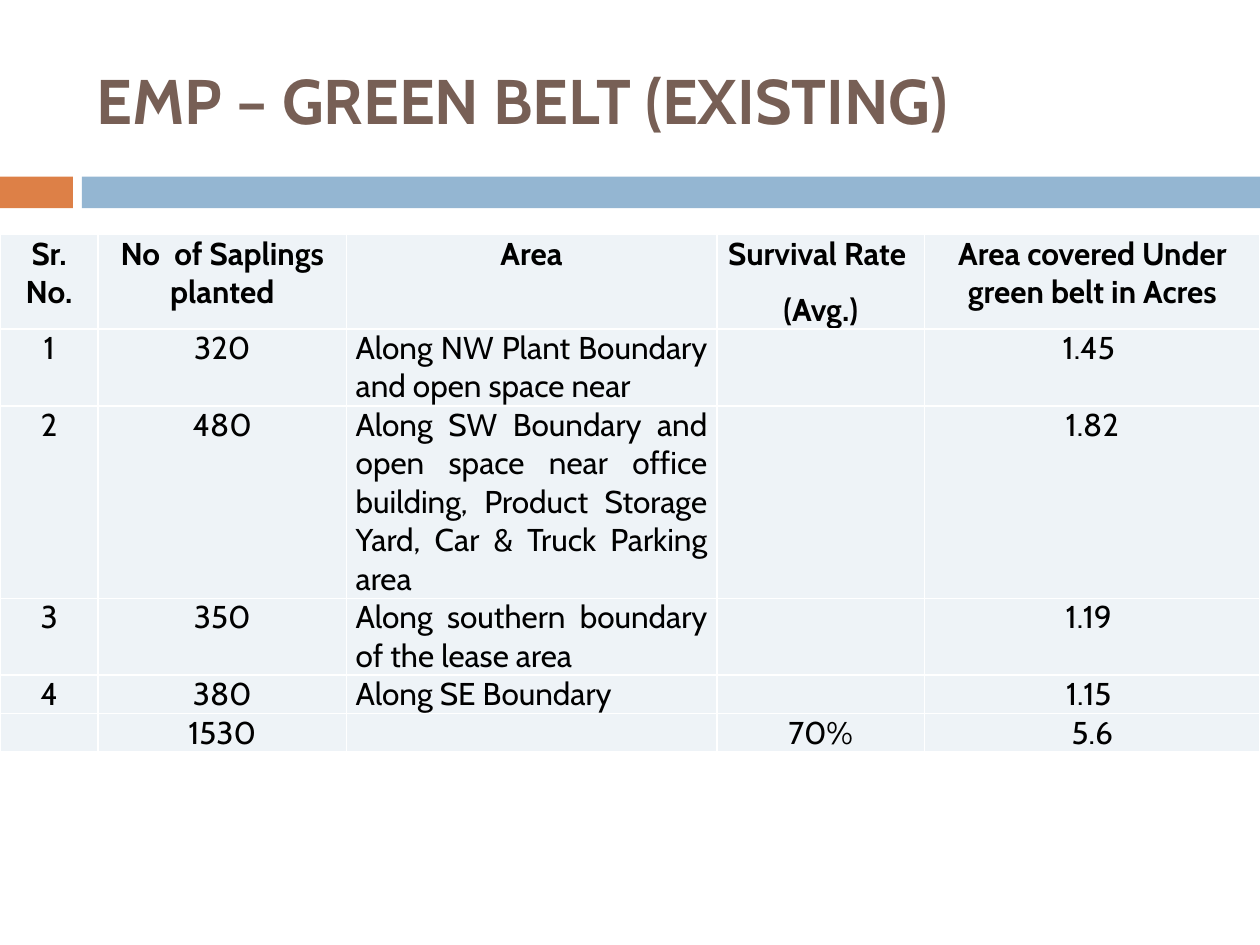
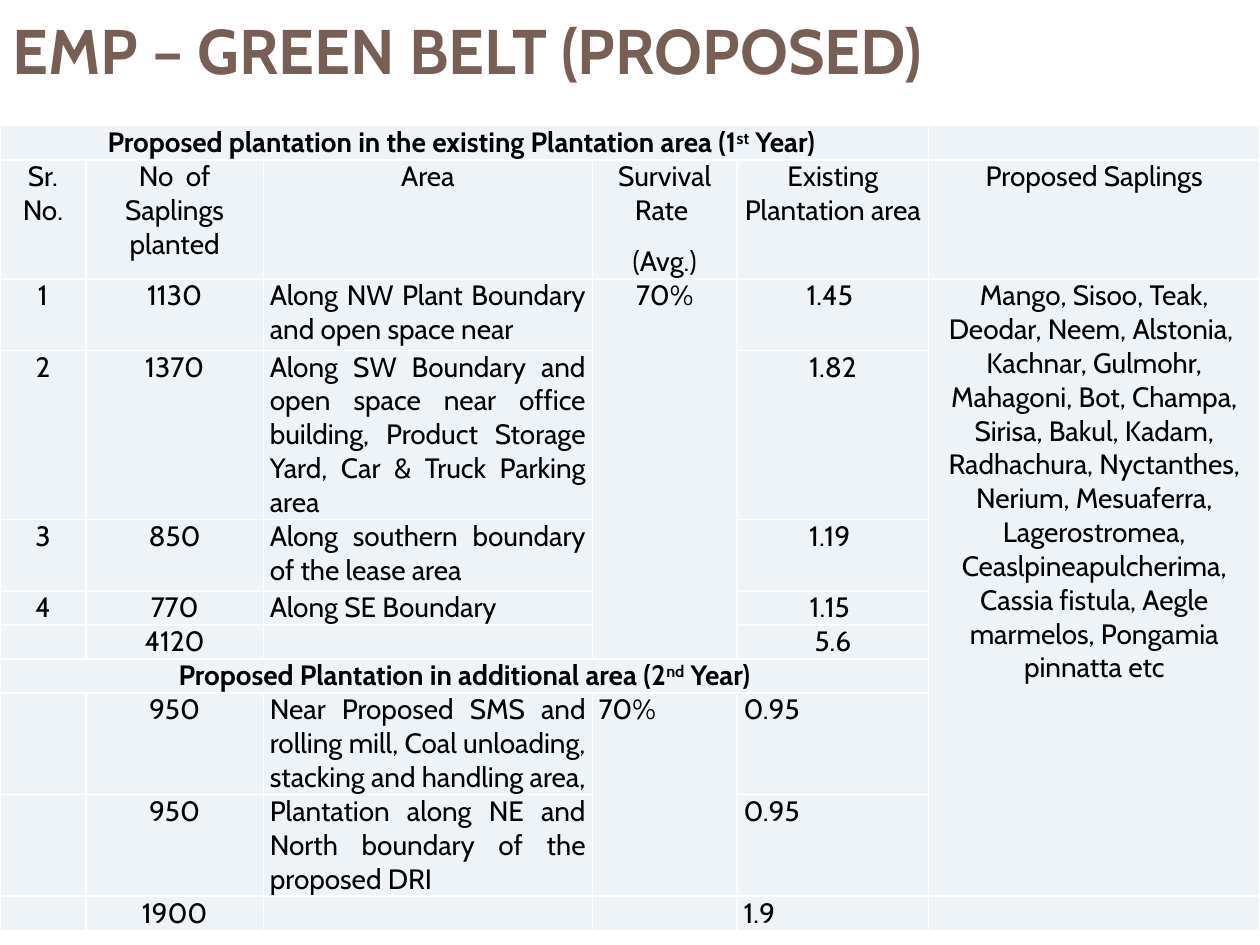
from dataclasses import dataclass

from lxml.etree import SubElement
from pptx import Presentation
from pptx.dml.color import RGBColor
from pptx.enum.shapes import MSO_SHAPE as Shape
from pptx.enum.text import MSO_ANCHOR as Anchor, MSO_AUTO_SIZE as AutoSize, PP_ALIGN as Align
from pptx.oxml.ns import qn
from pptx.slide import Slide
from pptx.util import Cm, Pt

FONT = "Cabin"
BROWN, ORANGE, BLUE = "775F55", "DD8047", "94B6D2"
BLACK, WHITE, PALE = "000000", "FFFFFF", "EEF3F7"
TITLE_ONLY = 5
AREA_COLUMN = 2


@dataclass(frozen=True)
class Box:
    left: float
    top: float
    width: float
    height: float

    def lengths(self) -> tuple:
        return tuple(Cm(v) for v in (self.left, self.top, self.width, self.height))


@dataclass(frozen=True)
class Band:
    box: Box
    color: str


@dataclass(frozen=True)
class Merge:
    row: int
    column: int
    last_row: int
    last_column: int


@dataclass(frozen=True)
class GreenBelt:
    """One slide: its title and its plantation table, lengths in centimetres."""
    title: str
    title_box: Box
    table_top: float
    widths: list[float]
    heights: list[float]
    rows: list[list[str]]
    size: int
    inset: float
    bold_rows: set[int]
    merges: tuple[Merge, ...] = ()
    justified_from: int = 99  # first row whose last columns are justified too


BANDS = (
    Band(Box(0, 3.56, 1.47, 0.64), ORANGE),
    Band(Box(1.65, 3.56, 23.75, 0.64), BLUE),
)

AREAS = (
    "Along NW Plant Boundary and open space near ",
    "Along SW Boundary and open space near office building, Product Storage Yard, "
    "Car & Truck Parking area",
    "Along southern boundary of the lease area",
    "Along SE Boundary",
)
ACRES = ("1.45 ", "1.82", "1.19 ", "1.15 ")
SURVIVAL = "Survival Rate \n(Avg.)"
SAPLINGS = (
    "Mango, Sisoo, Teak, Deodar, Neem, Alstonia,  Kachnar, Gulmohr, Mahagoni, Bot, Champa, "
    "Sirisa, Bakul, Kadam, Radhachura, Nyctanthes, Nerium, Mesuaferra, Lagerostromea, "
    "Ceaslpineapulcherima, Cassia fistula, Aegle marmelos, Pongamia pinnatta etc"
)


def area_rows(counts: tuple[str, ...]) -> list[list[str]]:
    return [[str(i), count, area, "", acres]
            for i, (count, area, acres) in enumerate(zip(counts, AREAS, ACRES), 1)]


EXISTING = GreenBelt(
    title="EMP – GREEN BELT (EXISTING)",
    title_box=Box(1.7, 0.64, 23.3, 2.74),
    table_top=4.73,
    widths=[1.98, 5, 7.47, 4.19, 6.76],
    heights=[1.9, 1.54, 3.85, 1.54, 0.77, 0.77],
    rows=[
        ["Sr. No.", "No  of Saplings planted", "Area", SURVIVAL,
         "Area covered Under green belt in Acres"],
        *area_rows(("320", "480", "350", "380")),
        ["", "1530", "", "70%", "5.6"],
    ],
    size=18,
    inset=0.19,
    bold_rows={0},
)

proposed_rows = area_rows(("1130", "1370", "850", "770"))
proposed_rows[0][3:] = ["70%", ACRES[0], SAPLINGS]

# Text between carets is superscript.
PROPOSED = GreenBelt(
    title="EMP – GREEN BELT (PROPOSED)",
    title_box=Box(0, 0.08, 25.9, 1.83),
    table_top=2.53,
    widths=[1.73, 3.58, 6.63, 2.92, 3.86, 6.68],
    heights=[0.68, 2.4, 1.44, 3.41, 1.44, 0.68, 0.68, 0.68, 2.05, 2.05, 0.68],
    rows=[
        ["Proposed plantation in the existing Plantation area (1^st^ Year) "],
        ["Sr. No.", "No  of Saplings planted", "Area", SURVIVAL,
         "Existing Plantation area", "Proposed Saplings"],
        *proposed_rows,
        ["", "4120", "", "", "5.6"],
        ["Proposed Plantation in additional area (2^nd^ Year)"],
        ["", "950", "Near Proposed SMS and rolling mill, Coal unloading, "
         "stacking and handling area,", "70%", "0.95"],
        ["", "950", "Plantation along NE and North boundary of the proposed DRI", "", "0.95"],
        ["", "1900", "", "", "1.9"],
    ],
    size=16,
    inset=0.13,
    bold_rows={0, 7},
    merges=(Merge(0, 0, 0, 4), Merge(7, 0, 7, 4), Merge(2, 3, 6, 3),
            Merge(8, 3, 9, 3), Merge(2, 5, 9, 5)),
    justified_from=8,
)


def rgb(color: str) -> RGBColor:
    return RGBColor.from_string(color)


def style_run(r, size: int, color: str, bold: bool) -> None:
    r.font.name, r.font.size, r.font.bold = FONT, Pt(size), bold
    r.font.color.rgb = rgb(color)


def add_title(s: Slide, text: str, box: Box) -> None:
    sp = s.shapes.title
    sp.left, sp.top, sp.width, sp.height = box.lengths()
    tf = sp.text_frame
    tf.text = text
    tf.auto_size, tf.vertical_anchor = AutoSize.NONE, Anchor.MIDDLE
    p = tf.paragraphs[0]
    p.alignment = Align.LEFT
    style_run(p.runs[0], 36, BROWN, True)


def add_band(s: Slide, band: Band) -> None:
    sp = s.shapes.add_shape(Shape.RECTANGLE, *band.box.lengths())
    sp.shadow.inherit = False
    sp.fill.solid()
    sp.fill.fore_color.rgb = rgb(band.color)
    sp.line.fill.background()


def style_cell(cell, inset: float) -> None:
    cell.margin_left = cell.margin_right = Cm(inset)
    cell.margin_top = cell.margin_bottom = 0
    for side in ("lnL", "lnR", "lnT", "lnB"):
        line = SubElement(cell._tc.get_or_add_tcPr(), qn(f"a:{side}"), w=str(Pt(1)))
        fill = SubElement(line, qn("a:solidFill"))
        SubElement(fill, qn("a:srgbClr"), val=WHITE)
    cell.fill.solid()
    cell.fill.fore_color.rgb = rgb(PALE)


def write_cell(cell, text: str, size: int, bold: bool, align: Align) -> None:
    tf = cell.text_frame
    tf.text = text.replace("^", "") if "\n" in text else ""
    if "\n" not in text:
        for i, piece in enumerate(text.split("^") if text else []):
            r = tf.paragraphs[0].add_run()
            r.text = piece
            if i % 2:
                r.font._element.set("baseline", "30000")
    for p in tf.paragraphs:
        p.alignment, p.space_after = align, Pt(10)
        for r in p.runs:
            style_run(r, size, BLACK, bold)
        if not p.runs:
            SubElement(p._p, qn("a:endParaRPr"), sz=str(size * 100))


def add_plantation_table(s: Slide, belt: GreenBelt) -> None:
    box = Box(0, belt.table_top, sum(belt.widths), sum(belt.heights))
    table = s.shapes.add_table(len(belt.heights), len(belt.widths), *box.lengths()).table
    table.first_row = table.horz_banding = False
    for column, width in zip(table.columns, belt.widths):
        column.width = Cm(width)
    for i, (row, height, texts) in enumerate(zip(table.rows, belt.heights, belt.rows)):
        row.height = Cm(height)
        for j, cell in enumerate(row.cells):
            text = texts[j] if j < len(texts) else ""
            is_area = j == AREA_COLUMN and text in belt.rows[i] and text != "Area"
            justified = is_area or (i >= belt.justified_from and j > AREA_COLUMN)
            style_cell(cell, belt.inset)
            write_cell(cell, text, belt.size, i in belt.bold_rows,
                       Align.JUSTIFY if justified else Align.CENTER)
    for m in belt.merges:
        table.cell(m.row, m.column).merge(table.cell(m.last_row, m.last_column))


def main() -> None:
    prs = Presentation()
    prs.slide_width, prs.slide_height = Cm(25.4), Cm(19.05)
    for belt in (EXISTING, PROPOSED):
        s = prs.slides.add_slide(prs.slide_layouts[TITLE_ONLY])
        for band in BANDS:
            add_band(s, band)
        add_title(s, belt.title, belt.title_box)
        add_plantation_table(s, belt)
    prs.save("out.pptx")


if __name__ == "__main__":
    main()
